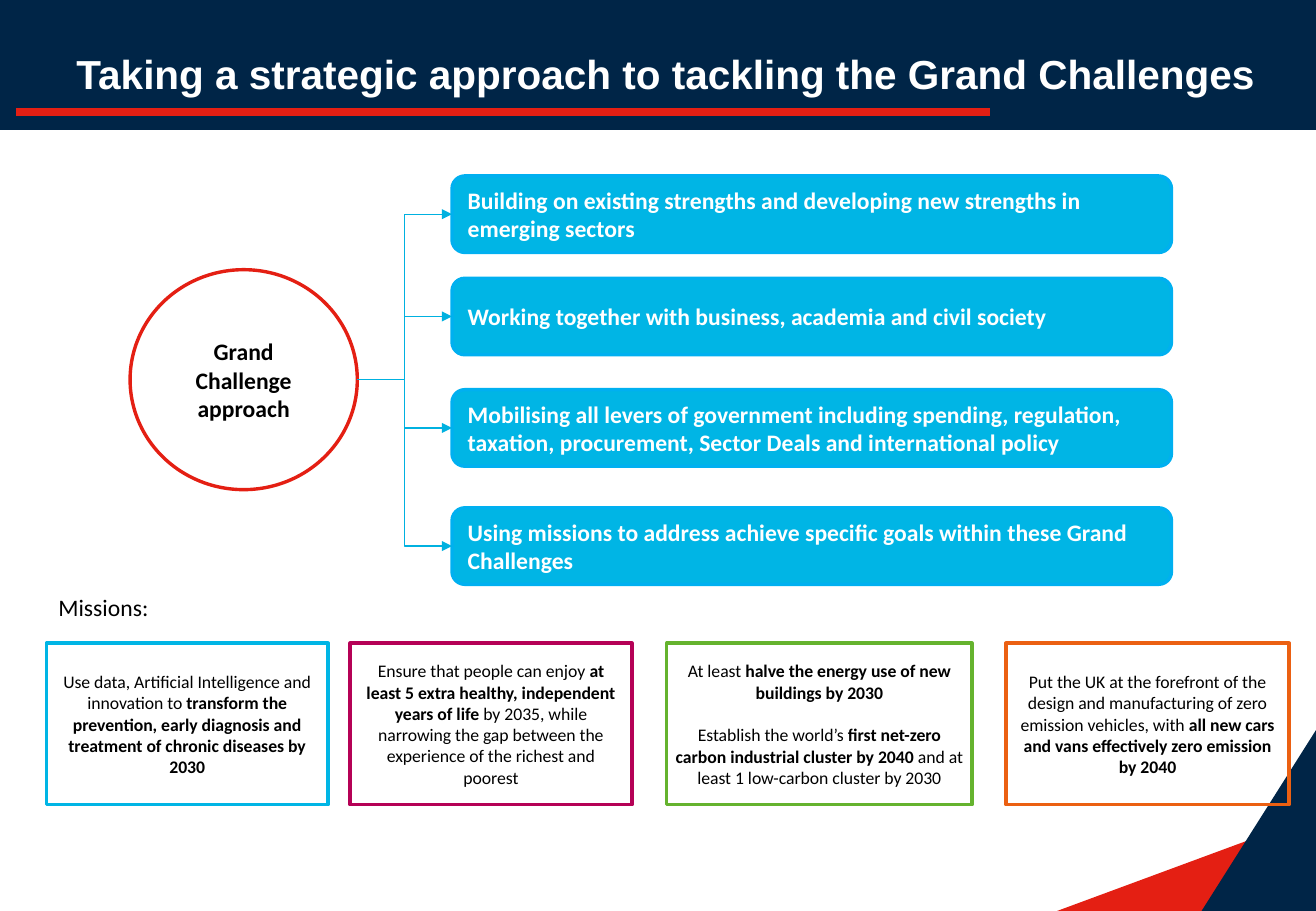
from dataclasses import dataclass

from lxml.etree import SubElement
from pptx import Presentation
from pptx.dml.color import RGBColor
from pptx.enum.shapes import MSO_CONNECTOR as Connector, MSO_SHAPE as Shape
from pptx.enum.text import MSO_ANCHOR as Anchor, PP_ALIGN as Align
from pptx.oxml.ns import qn
from pptx.util import Cm, Pt

SLIDE_WIDTH, SLIDE_HEIGHT = 27.51, 19.05


@dataclass(frozen=True)
class Theme:
    navy: str = "002547"
    red: str = "E41F13"
    cyan: str = "00B5E5"
    cyan_edge: str = "00B0F0"
    cyan_arrow: str = "00B1E0"
    magenta: str = "B50156"
    green: str = "65B32E"
    orange: str = "EB6012"
    white: str = "FFFFFF"
    black: str = "000000"
    title_font: str = "Arial"
    body_font: str = "Calibri"
    title_size: float = 24
    body_size: float = 14
    mission_size: float = 10.5
    paragraph_gap: float = 12.8
    outline: float = 2
    arrow: float = 0.75
    rule: float = 4.5


class SlideBuilder:
    def __init__(self, slide, theme):
        self.shapes = slide.shapes
        self.theme = theme

    def add_shape(self, kind, box, fill=None, line=None, flip=False):
        shape = self.shapes.add_shape(kind, *map(Cm, box))
        shape.shadow.inherit = False
        if fill:
            shape.fill.solid()
            shape.fill.fore_color.rgb = RGBColor.from_string(fill)
        else:
            shape.fill.background()
        if line:
            shape.line.color.rgb = RGBColor.from_string(line)
            shape.line.width = Pt(self.theme.outline)
        else:
            shape.line.fill.background()
        if flip:
            shape.element.spPr.xfrm.set("flipH", "1")
        return shape

    def add_textbox(self, box):
        return self.shapes.add_textbox(*map(Cm, box))

    def add_text(self, shape, paragraphs, size, color, font=None, bold=False,
                 align=Align.LEFT, anchor=Anchor.MIDDLE, margins=None):
        """Fill a shape with text; ** switches bold on and off within a paragraph."""
        frame = shape.text_frame
        frame.word_wrap = True
        frame.vertical_anchor = anchor
        if margins:
            frame.margin_left = frame.margin_right = Cm(margins[0])
            frame.margin_top = frame.margin_bottom = Cm(margins[1])
        for index, text in enumerate(paragraphs):
            paragraph = frame.add_paragraph() if index else frame.paragraphs[0]
            paragraph.alignment = align
            if index:
                paragraph.space_before = Pt(self.theme.paragraph_gap)
            for part, words in enumerate(text.split("**")):
                if not words:
                    continue
                run = paragraph.add_run()
                run.text = words
                run.font.name = font or self.theme.body_font
                run.font.size = Pt(size)
                run.font.bold = bold or part % 2 == 1
                run.font.color.rgb = RGBColor.from_string(color)

    def add_connector(self, kind, start, end, color, width, arrow=False):
        connector = self.shapes.add_connector(kind, *map(Cm, start + end))
        connector.line.color.rgb = RGBColor.from_string(color)
        connector.line.width = Pt(width)
        properties = connector.element.spPr
        if arrow:
            SubElement(properties.find(qn("a:ln")), qn("a:tailEnd"), type="triangle")
        SubElement(properties, qn("a:effectLst"))


def draw_frame(builder):
    theme = builder.theme
    builder.add_shape(Shape.RECTANGLE, (0, 0, SLIDE_WIDTH, 2.72), theme.navy)
    builder.add_connector(Connector.STRAIGHT, (0.33, 2.34), (20.7, 2.34),
                          theme.red, theme.rule)
    for width, height, color in ((5.41, 2, theme.red), (2.39, 3.78, theme.navy)):
        corner = (SLIDE_WIDTH - width, SLIDE_HEIGHT - height, width, height)
        builder.add_shape(Shape.RIGHT_TRIANGLE, corner, color, flip=True)
    builder.add_text(builder.add_textbox((1.35, 0.74, 25.6, 1.6)),
                     ["Taking a strategic approach to tackling the Grand Challenges"],
                     theme.title_size, theme.white, theme.title_font, bold=True)


def draw_approach(builder):
    theme = builder.theme
    left, top, width, height = circle_box = (2.72, 5.64, 4.75, 4.6)
    circle = builder.add_shape(Shape.OVAL, circle_box, line=theme.red)
    builder.add_text(circle, ["Grand Challenge approach"], theme.body_size, theme.black,
                     bold=True, align=Align.CENTER)
    hub = (left + width, top + height / 2)
    bar_left, bar_width, bar_height = 9.45, 15.04, 1.6
    strands = (
        (3.68, "Building on existing strengths and developing new strengths in "
               "emerging sectors"),
        (5.82, "Working together with business, academia and civil society"),
        (8.15, "Mobilising all levers of government including spending, regulation, "
               "taxation, procurement, Sector Deals and international policy"),
        (10.62, "Using missions to address achieve specific goals within these "
                "Grand Challenges"),
    )
    for bar_top, text in strands:
        bar = builder.add_shape(Shape.ROUNDED_RECTANGLE,
                                (bar_left, bar_top, bar_width, bar_height),
                                theme.cyan, theme.cyan_edge)
        builder.add_text(bar, [text], theme.body_size, theme.white, bold=True)
        builder.add_connector(Connector.ELBOW, hub, (bar_left, bar_top + bar_height / 2),
                              theme.cyan_arrow, theme.arrow, arrow=True)


def draw_missions(builder):
    theme = builder.theme
    builder.add_text(builder.add_textbox((0.97, 12.27, 5.26, 0.86)), ["Missions:"],
                     theme.body_size, theme.black, anchor=Anchor.TOP)
    missions = (
        (0.97, 5.89, theme.cyan, [
            "Use data, Artificial Intelligence and innovation to **transform the "
            "prevention, early diagnosis and treatment of chronic diseases by 2030**"]),
        (7.32, 5.89, theme.magenta, [
            "Ensure that people can enjoy **at least 5 extra healthy, independent years "
            "of life** by 2035, while narrowing the gap between the experience of the "
            "richest and poorest"]),
        (13.94, 6.38, theme.green, [
            "At least **halve the energy use of new buildings by 2030**",
            "Establish the world’s **first net-zero carbon industrial cluster by 2040 "
            "**and at least 1 low-carbon cluster by 2030"]),
        (21.03, 5.92, theme.orange, [
            "Put the UK at the forefront of the design and manufacturing of zero "
            "emission vehicles, with **all new cars and vans effectively zero "
            "emission by 2040**"]),
    )
    for left, width, color, paragraphs in missions:
        card = builder.add_shape(Shape.RECTANGLE, (left, 13.45, width, 3.38), line=color)
        builder.add_text(card, paragraphs, theme.mission_size, theme.black,
                         align=Align.CENTER, margins=(0.18, 0.1))


def main():
    presentation = Presentation()
    presentation.slide_width = Cm(SLIDE_WIDTH)
    presentation.slide_height = Cm(SLIDE_HEIGHT)
    slide = presentation.slides.add_slide(presentation.slide_layouts[6])
    builder = SlideBuilder(slide, Theme())
    draw_frame(builder)
    draw_approach(builder)
    draw_missions(builder)
    presentation.save("out.pptx")


if __name__ == "__main__":
    main()
